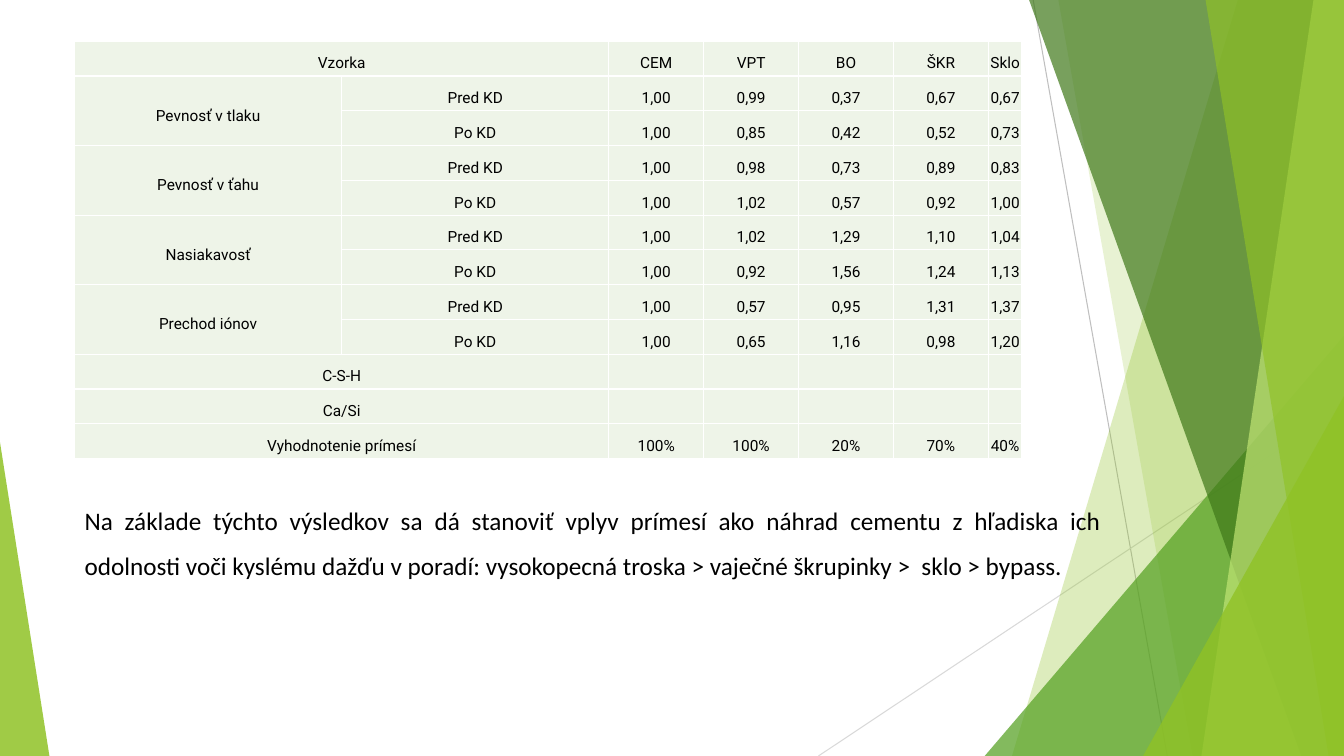
from lxml import etree
from pptx import Presentation
from pptx.dml.color import RGBColor
from pptx.enum.shapes import MSO_CONNECTOR, MSO_SHAPE
from pptx.enum.text import MSO_ANCHOR, MSO_AUTO_SIZE, PP_ALIGN
from pptx.oxml.ns import qn
from pptx.util import Pt

STRAIGHT = MSO_CONNECTOR.STRAIGHT
TRIANGLE = MSO_SHAPE.ISOSCELES_TRIANGLE
MIDDLE = MSO_ANCHOR.MIDDLE
GROW = MSO_AUTO_SIZE.SHAPE_TO_FIT_TEXT
CENTER, JUSTIFY = PP_ALIGN.CENTER, PP_ALIGN.JUSTIFY

WIDTH, HEIGHT = 960, 540
COLORS = {
    "text": "000000", "cell": "EEF4E8", "border": "FFFFFF",
    "steep_line": "BFBFBF", "flat_line": "D9D9D9",
    "lime": "90C226", "green": "54A021", "forest": "3F7819", "pale": "C0E474",
}

HEADER = ["CEM", "VPT", "BO", "ŠKR", "Sklo"]
PROPERTIES = {
    "Pevnosť v tlaku": ["1,00 0,99 0,37 0,67 0,67", "1,00 0,85 0,42 0,52 0,73"],
    "Pevnosť v ťahu": ["1,00 0,98 0,73 0,89 0,83", "1,00 1,02 0,57 0,92 1,00"],
    "Nasiakavosť": ["1,00 1,02 1,29 1,10 1,04", "1,00 0,92 1,56 1,24 1,13"],
    "Prechod iónov": ["1,00 0,57 0,95 1,31 1,37", "1,00 0,65 1,16 0,98 1,20"],
}
SUMMARY = {
    "C-S-H": [""] * 5,
    "Ca/Si": [""] * 5,
    "Vyhodnotenie prímesí": ["100%", "100%", "20%", "70%", "40%"],
}
CONCLUSION = (
    "Na základe týchto výsledkov sa dá stanoviť vplyv prímesí ako náhrad cementu "
    "z hľadiska ich odolnosti voči kyslému dažďu v poradí: vysokopecná troska > "
    "vaječné škrupinky >  sklo > bypass. "
)


def rgb(name):
    return RGBColor.from_string(COLORS[name])


def write(frame, text, *, font, size, align, color="text"):
    paragraph = frame.paragraphs[0]
    paragraph.alignment = align
    paragraph.line_spacing = 1.5
    paragraph.space_after = Pt(8)
    run = paragraph.add_run()
    run.text = text
    run.font.name = font
    run.font.size = Pt(size)
    run.font.color.rgb = rgb(color)


def paint(shape, color, opacity):
    """Fill a facet with a see-through colour, without outline or shadow."""
    shape.shadow.inherit = False
    shape.line.fill.background()
    shape.fill.solid()
    shape.fill.fore_color.rgb = rgb(color)
    tint = shape.fill._xPr.find(qn("a:solidFill"))[0]
    etree.SubElement(tint, qn("a:alpha")).set("val", str(opacity * 1000))


def add_hairline(slide, start, end, color):
    line = slide.shapes.add_connector(STRAIGHT, *map(Pt, start + end))
    line.line.color.rgb = rgb(color)
    line.line.width = Pt(0.75)
    etree.SubElement(line._element.spPr, qn("a:effectLst"))


def add_band(slide, top_x, bottom_x, right, bottom, color, opacity):
    """Full-height band between a slanted left edge and the right slide edge."""
    outline = slide.shapes.build_freeform(Pt(top_x), 0)
    corners = [(right, 0), (right, bottom), (bottom_x, bottom)]
    outline.add_line_segments([(Pt(x), Pt(y)) for x, y in corners], close=True)
    paint(outline.convert_to_shape(), color, opacity)


def add_corner(slide, left, top, width, height, apex, color, opacity):
    """Right-angled triangle whose apex is at the left (0) or right (1)."""
    corner = slide.shapes.add_shape(TRIANGLE, *map(Pt, (left, top, width, height)))
    corner.adjustments[0] = apex
    paint(corner, color, opacity)


def add_backdrop(slide, width, height):
    def band(top_x, bottom_x, color, opacity):
        add_band(slide, top_x, bottom_x, width, height, color, opacity)

    def right_corner(left, top, color, opacity):
        add_corner(slide, left, top, width - left, height - top, 1, color, opacity)

    add_hairline(slide, (738, 0), (833.8, height), "steep_line")
    add_hairline(slide, (width, 290.2), (584.6, height), "flat_line")
    band(884.2, 722.9, "lime", 30)
    band(756, 851.8, "lime", 20)
    right_corner(703.4, 239.8, "green", 72)
    band(735.1, 929.5, "forest", 70)
    band(938.2, 858.2, "pale", 70)
    band(861.1, 949, "lime", 65)
    right_corner(816.5, 283, "lime", 80)
    add_corner(slide, 0, 316, 35.3, height - 316, 0, "lime", 85)


def add_borders(cell):
    properties = cell._tc.get_or_add_tcPr()
    for position, side in enumerate(("lnL", "lnR", "lnT", "lnB")):
        border = etree.Element(qn(f"a:{side}"), w=str(Pt(1)))
        fill = etree.SubElement(border, qn("a:solidFill"))
        etree.SubElement(fill, qn("a:srgbClr"), val=COLORS["border"])
        properties.insert(position, border)


def results_rows():
    rows = [["Vzorka", ""] + HEADER]
    for name, (before, after) in PROPERTIES.items():
        rows.append([name, "Pred KD"] + before.split())
        rows.append(["", "Po KD"] + after.split())
    return rows + [[name, ""] + values for name, values in SUMMARY.items()]


def add_results(slide, left, top, width, height):
    rows = results_rows()
    shares = [190.8] * 2 + [67.8] * 4 + [24]
    table = slide.shapes.add_table(
        len(rows), len(shares), *map(Pt, (left, top, width, height))).table
    table.first_row = table.horz_banding = False
    for column, share in zip(table.columns, shares):
        column.width = Pt(width * share / sum(shares))
    for r, values in enumerate(rows):
        table.rows[r].height = Pt(height / len(rows))
        for c, value in enumerate(values):
            cell = table.cell(r, c)
            cell.fill.solid()
            cell.fill.fore_color.rgb = rgb("cell")
            cell.vertical_anchor = MIDDLE
            cell.margin_left = cell.margin_right = cell.margin_top = Pt(0.7)
            cell.margin_bottom = 0
            add_borders(cell)
            if value:
                write(cell.text_frame, value, font="Roboto", size=11, align=CENTER)
        if values[0]:
            last = (r, 1) if not values[1] else (r + 1, 0)
            table.cell(r, 0).merge(table.cell(*last))


def add_conclusion(slide, left, top, width, height):
    frame = slide.shapes.add_textbox(*map(Pt, (left, top, width, height))).text_frame
    frame.word_wrap = True
    frame.auto_size = GROW
    write(frame, CONCLUSION, font="Calibri", size=18, align=JUSTIFY)


def main():
    deck = Presentation()
    deck.slide_width, deck.slide_height = Pt(WIDTH), Pt(HEIGHT)
    slide = deck.slides.add_slide(deck.slide_layouts[6])
    add_backdrop(slide, WIDTH, HEIGHT)
    add_results(slide, 53.3, 29.5, 676.8, 298)
    add_conclusion(slide, 53.3, 346.3, 740.2, 72.7)
    deck.save("out.pptx")


if __name__ == "__main__":
    main()
